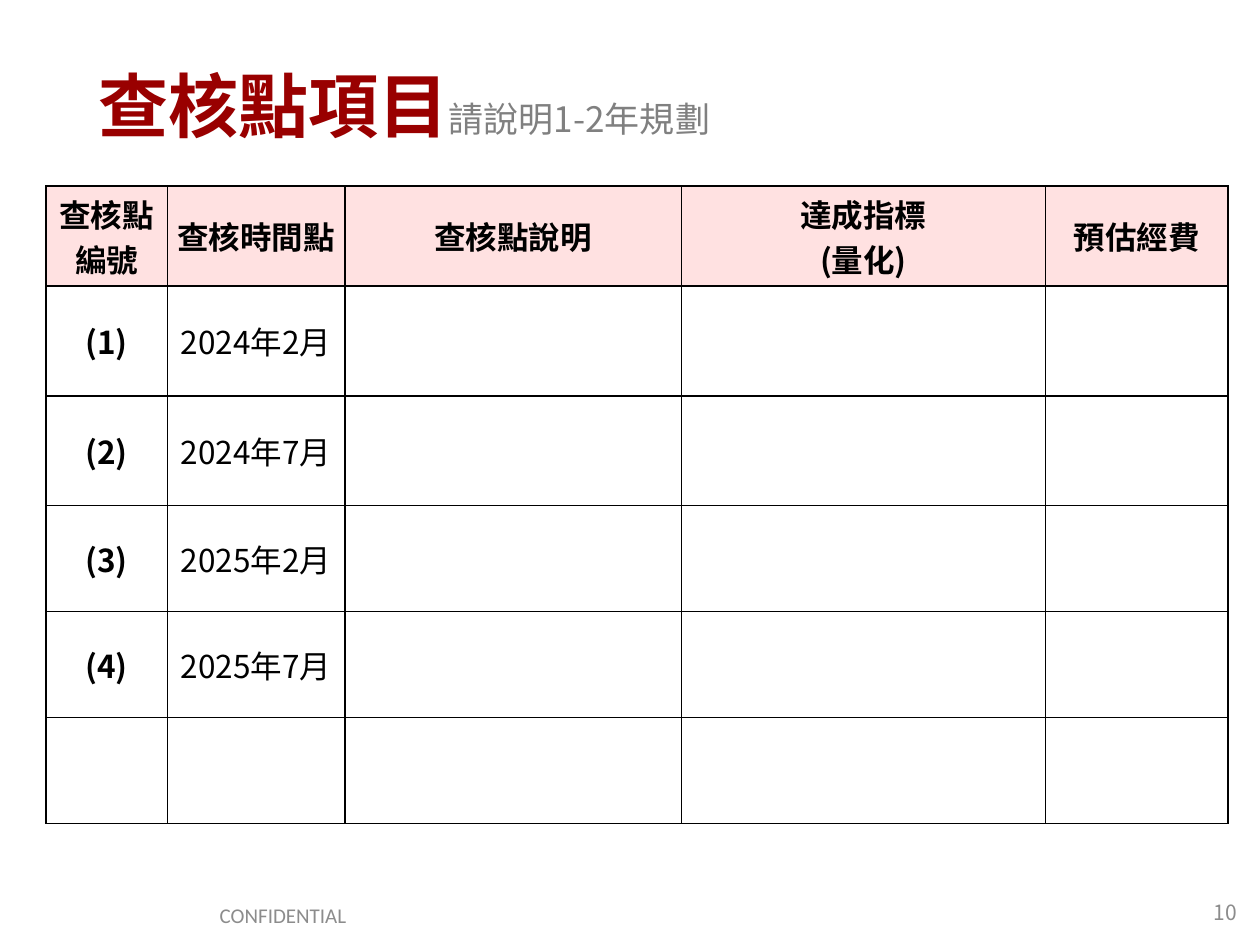
"""Build the checkpoint planning slide with its title, schedule table and footer."""
from dataclasses import dataclass

from lxml.etree import SubElement
from pptx import Presentation
from pptx.dml.color import RGBColor as Rgb
from pptx.enum.text import MSO_ANCHOR as Anchor, PP_ALIGN as Align
from pptx.oxml import parse_xml
from pptx.oxml.ns import nsdecls, qn
from pptx.util import Pt


@dataclass(frozen=True)
class Theme:
    cjk: str = "Noto Sans CJK SC"
    latin: str = "Calibri"
    title: str = "990000"
    hint: str = "808080"
    footer: str = "8C8C8C"
    ink: str = "000000"
    header: str = "FFE1E1"
    title_size: int = 40
    hint_size: int = 20
    table_size: int = 18
    footer_size: int = 12


THEME = Theme()
COLUMN_WIDTHS = (69.4, 101.5, 192.3, 208.1, 104.3)
ROW_HEIGHTS = (57, 62.8, 62.8, 60.5, 60.5, 60.5)
HEADINGS = ("查核點\n編號", "查核時間點", "查核點說明", "達成指標\n(量化)", "預估經費")
CHECK_DATES = ("2024年2月", "2024年7月", "2025年2月", "2025年7月")


def style(font, size, color, bold=False, face=THEME.cjk):
    font.size = Pt(size)
    font.bold = bold
    font.color.rgb = Rgb.from_string(color)
    font.name = face
    SubElement(font._element, qn("a:ea"), typeface=face)


def add_text_area(slide, left, top, width, height):
    frame = slide.shapes.add_textbox(Pt(left), Pt(top), Pt(width), Pt(height)).text_frame
    frame.word_wrap = True
    frame.vertical_anchor = Anchor.MIDDLE
    return frame.paragraphs[0]


def add_title(slide):
    heading = add_text_area(slide, 49.5, 28.8, 621, 67.7)
    heading.line_spacing = 0.9
    for wording, size, color, bold in (
        ("查核點項目", THEME.title_size, THEME.title, True),
        ("請說明1-2年規劃", THEME.hint_size, THEME.hint, False),
    ):
        part = heading.add_run()
        part.text = wording
        style(part.font, size, color, bold)


def add_footer(slide, wording, area, alignment, face):
    note = add_text_area(slide, *area)
    note.text = wording
    note.alignment = alignment
    style(note.font, THEME.footer_size, THEME.footer, face=face)


def draw_borders(cell):
    properties = cell._tc.get_or_add_tcPr()
    for side in ("lnL", "lnR", "lnT", "lnB"):
        properties.append(parse_xml(
            f'<a:{side} {nsdecls("a")} w="{Pt(1)}"><a:solidFill>'
            f'<a:srgbClr val="{THEME.ink}"/></a:solidFill></a:{side}>'
        ))


def fill_cell(cell, wording, bold, background=None):
    draw_borders(cell)
    if background:
        cell.fill.solid()
        cell.fill.fore_color.rgb = Rgb.from_string(background)
    else:
        cell.fill.background()
    cell.vertical_anchor = Anchor.MIDDLE
    cell.margin_left = cell.margin_right = Pt(5.4)
    cell.margin_top = cell.margin_bottom = 0
    cell.text_frame.text = wording
    for line in cell.text_frame.paragraphs:
        line.alignment = Align.CENTER
        style(line.font, THEME.table_size, THEME.ink, bold)


def add_schedule(slide):
    schedule = slide.shapes.add_table(
        len(ROW_HEIGHTS), len(COLUMN_WIDTHS), Pt(26.2), Pt(106.4),
        Pt(sum(COLUMN_WIDTHS)), Pt(sum(ROW_HEIGHTS)),
    ).table
    schedule.first_row = schedule.horz_banding = False
    for column, width in zip(schedule.columns, COLUMN_WIDTHS):
        column.width = Pt(width)
    for row, height in zip(schedule.rows, ROW_HEIGHTS):
        row.height = Pt(height)

    checkpoints = [(f"({number})", date) for number, date in enumerate(CHECK_DATES, 1)]
    for r, entries in enumerate([HEADINGS, *checkpoints, ()]):
        for c in range(len(COLUMN_WIDTHS)):
            wording = entries[c] if c < len(entries) else ""
            fill_cell(schedule.cell(r, c), wording, r == 0 or c == 0,
                      THEME.header if r == 0 else None)


def main():
    deck = Presentation()
    deck.slide_width, deck.slide_height = Pt(720), Pt(540)
    slide = deck.slides.add_slide(deck.slide_layouts[6])
    add_title(slide)
    add_footer(slide, "10", (681, 507, 33, 28.8), Align.RIGHT, THEME.cjk)
    add_footer(slide, "CONFIDENTIAL", (66, 508.5, 191.5, 28.8), Align.CENTER, THEME.latin)
    add_schedule(slide)
    deck.save("out.pptx")


if __name__ == "__main__":
    main()
